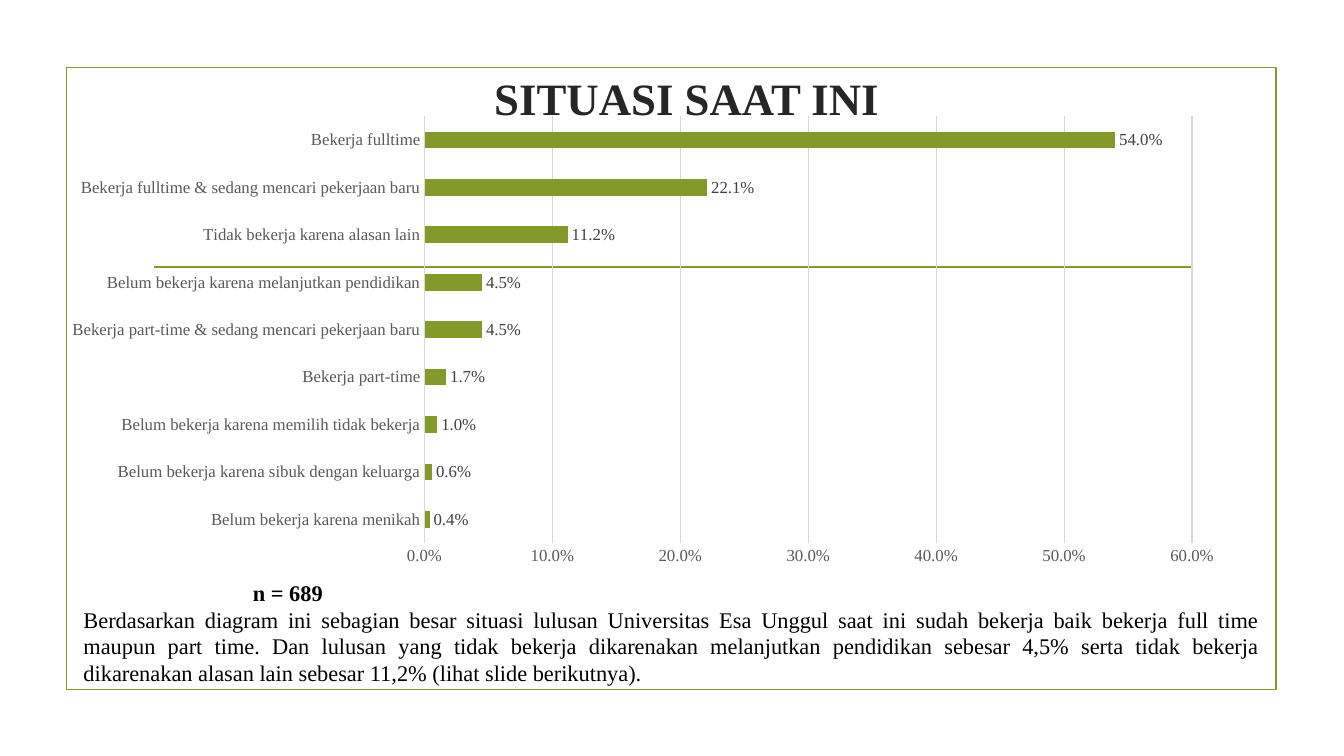
import pptx
import pptx.chart.data
import pptx.dml.color
import pptx.enum.chart
import pptx.enum.shapes
import pptx.enum.text
import pptx.oxml.ns
import pptx.oxml.xmlchemy
import pptx.util
from pptx.util import Inches

OLIVE = pptx.dml.color.RGBColor(0x83, 0x99, 0x2A)
WHITE = pptx.dml.color.RGBColor(0xFF, 0xFF, 0xFF)
BLACK = pptx.dml.color.RGBColor(0x00, 0x00, 0x00)
TITLE_GREY = pptx.dml.color.RGBColor(0x26, 0x26, 0x26)
LABEL_GREY = pptx.dml.color.RGBColor(0x40, 0x40, 0x40)
AXIS_GREY = pptx.dml.color.RGBColor(0x59, 0x59, 0x59)
GRID_GREY = pptx.dml.color.RGBColor(0xD9, 0xD9, 0xD9)
ALIGN = pptx.enum.text.PP_ALIGN
ANCHOR = pptx.enum.text.MSO_ANCHOR


def set_font(font, size, color, bold=False):
    formats = {"name": "Times New Roman", "size": pptx.util.Pt(size), "bold": bold}
    for key, value in formats.items():
        setattr(font, key, value)
    font.color.rgb = color


def write_text(shape, text, size, color, bold, align, anchor):
    frame = shape.text_frame
    frame.word_wrap = True
    frame.vertical_anchor = anchor
    paragraph = frame.paragraphs[0]
    paragraph.alignment = align
    run = paragraph.add_run()
    run.text = text
    set_font(run.font, size, color, bold)


presentation = pptx.Presentation()
presentation.slide_width = Inches(13.33)
presentation.slide_height = Inches(7.5)
slide = presentation.slides.add_slide(presentation.slide_layouts[6])
shapes = slide.shapes
RECTANGLE = pptx.enum.shapes.MSO_SHAPE.RECTANGLE

border = shapes.add_shape(RECTANGLE, Inches(0.66), Inches(0.67), Inches(12), Inches(6.17))
border.shadow.inherit = False
border.fill.background()
border.line.color.rgb = OLIVE
border.line.width = pptx.util.Pt(1.25)

divider = shapes.add_connector(
    pptx.enum.shapes.MSO_CONNECTOR.STRAIGHT,
    Inches(1.53), Inches(2.65), Inches(11.81), Inches(2.65),
)
divider.line.color.rgb = OLIVE
divider.line.width = pptx.util.Pt(1.25)
divider._element.spPr.append(pptx.oxml.xmlchemy.OxmlElement("a:effectLst"))

title = shapes.add_textbox(Inches(2.06), Inches(0.58), Inches(9.5), Inches(0.78))
write_text(title, "SITUASI SAAT INI", 32, TITLE_GREY, True, ALIGN.CENTER, ANCHOR.MIDDLE)

situations = {
    "Belum bekerja karena menikah": 0.004,
    "Belum bekerja karena sibuk dengan keluarga": 0.006,
    "Belum bekerja karena memilih tidak bekerja": 0.01,
    "Bekerja part-time": 0.017,
    "Bekerja part-time & sedang mencari pekerjaan baru": 0.045,
    "Belum bekerja karena melanjutkan pendidikan": 0.045,
    "Tidak bekerja karena alasan lain": 0.112,
    "Bekerja fulltime & sedang mencari pekerjaan baru": 0.221,
    "Bekerja fulltime": 0.54,
}
situation_data = pptx.chart.data.CategoryChartData(number_format="0.0%")
situation_data.categories = list(situations)
situation_data.add_series("Series 1", list(situations.values()))
chart = shapes.add_chart(
    pptx.enum.chart.XL_CHART_TYPE.BAR_CLUSTERED,
    Inches(0.68), Inches(0.93), Inches(11.5), Inches(4.76), situation_data,
).chart
chart.has_legend = False
chart.has_title = False
set_font(chart.font, 10, BLACK)

for axis in (chart.category_axis, chart.value_axis):
    axis.major_tick_mark = pptx.enum.chart.XL_TICK_MARK.NONE
    axis.minor_tick_mark = pptx.enum.chart.XL_TICK_MARK.NONE
    set_font(axis.tick_labels.font, 12, AXIS_GREY)
chart.category_axis.has_major_gridlines = False
chart.value_axis.has_major_gridlines = True
for line in (chart.category_axis.format.line, chart.value_axis.major_gridlines.format.line):
    line.color.rgb = GRID_GREY
    line.width = pptx.util.Pt(0.75)
chart.value_axis.format.line.fill.background()
chart.value_axis.minimum_scale = 0
chart.value_axis.maximum_scale = 0.6
chart.value_axis.major_unit = 0.1
chart.value_axis.tick_labels.number_format = "0.0%"
chart.value_axis.tick_labels.number_format_is_linked = False

bars = chart.plots[0]
bars.gap_width = 182
bars.vary_by_categories = False
bars.series[0].format.fill.solid()
bars.series[0].format.fill.fore_color.rgb = OLIVE
bars.has_data_labels = True
label_formats = {
    "show_value": True,
    "number_format": "0.0%",
    "number_format_is_linked": False,
    "position": pptx.enum.chart.XL_LABEL_POSITION.OUTSIDE_END,
}
for key, value in label_formats.items():
    setattr(bars.data_labels, key, value)
set_font(bars.data_labels.font, 12, LABEL_GREY)

plot_area = chart._chartSpace.chart.plotArea
for old_layout in plot_area.findall(pptx.oxml.ns.qn("c:layout")):
    plot_area.remove(old_layout)
layout = pptx.oxml.xmlchemy.OxmlElement("c:layout")
manual_layout = pptx.oxml.xmlchemy.OxmlElement("c:manualLayout")
layout.append(manual_layout)
plot_area.insert(0, layout)
placement = {
    "layoutTarget": "inner", "xMode": "edge", "yMode": "edge",
    "x": 0.307, "y": 0.047, "w": 0.662, "h": 0.89,
}
for key, value in placement.items():
    setting = pptx.oxml.xmlchemy.OxmlElement("c:" + key)
    setting.set("val", str(value))
    manual_layout.append(setting)

sample_size = shapes.add_shape(RECTANGLE, Inches(2.41), Inches(5.7), Inches(1.07), Inches(0.26))
sample_size.shadow.inherit = False
sample_size.fill.solid()
sample_size.fill.fore_color.rgb = WHITE
sample_size.line.color.rgb = WHITE
sample_size.line.width = pptx.util.Pt(1)
write_text(sample_size, "n = 689", 16, BLACK, True, ALIGN.LEFT, ANCHOR.TOP)

summary = shapes.add_textbox(Inches(0.73), Inches(5.96), Inches(11.86), Inches(1.37))
write_text(
    summary,
    "Berdasarkan diagram ini sebagian besar situasi lulusan Universitas Esa Unggul saat ini "
    "sudah bekerja baik bekerja full time maupun part time. Dan lulusan yang tidak bekerja "
    "dikarenakan melanjutkan pendidikan sebesar 4,5% serta tidak bekerja dikarenakan alasan "
    "lain sebesar 11,2% (lihat slide berikutnya).",
    16, BLACK, False, ALIGN.JUSTIFY, ANCHOR.TOP,
)

presentation.save("out.pptx")
